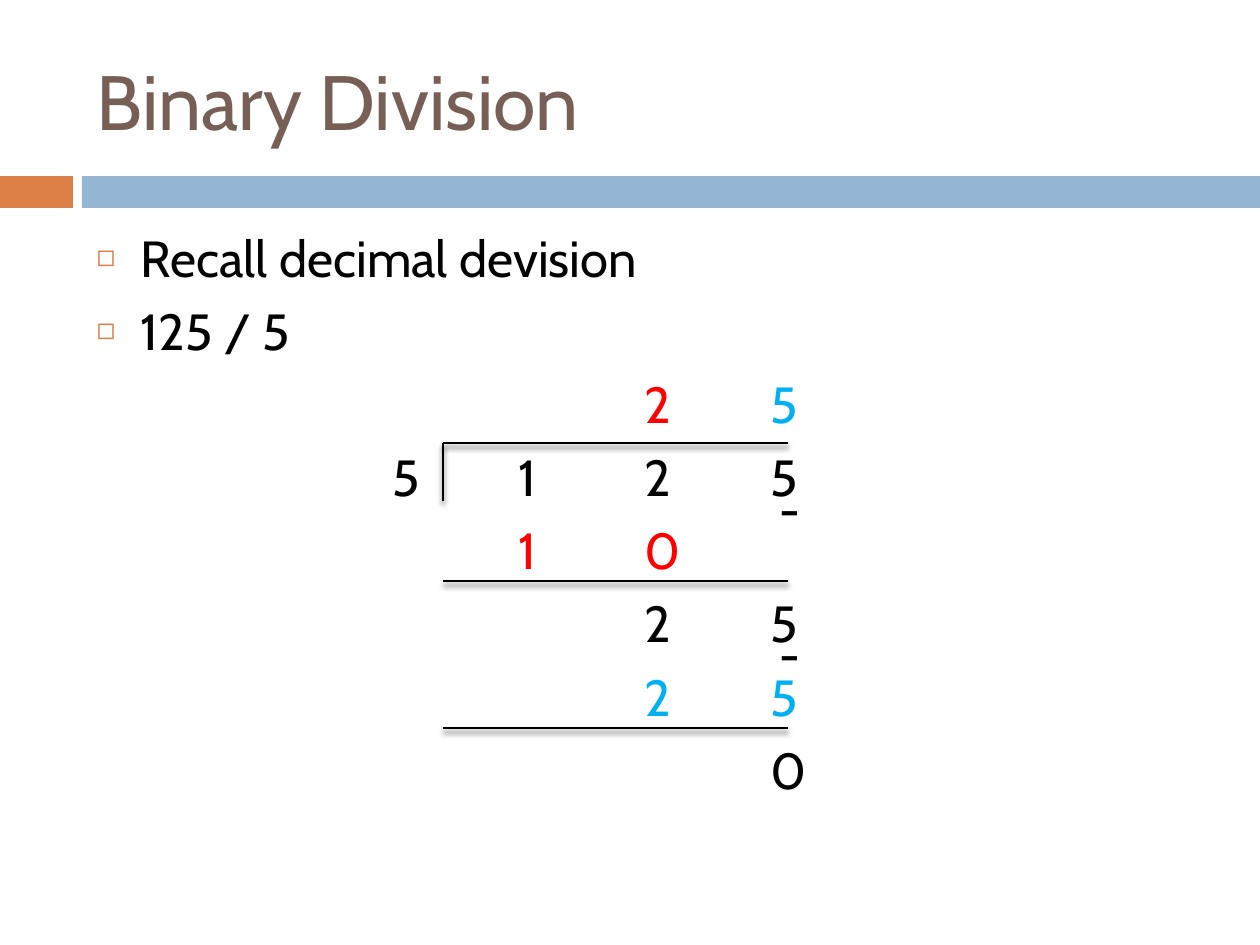
from dataclasses import dataclass

from lxml.etree import SubElement
from pptx import Presentation
from pptx.dml.color import RGBColor
from pptx.enum.shapes import MSO_CONNECTOR as Connector, MSO_SHAPE as Shape
from pptx.enum.text import MSO_ANCHOR as Anchor, MSO_AUTO_SIZE as AutoSize, PP_ALIGN as Align
from pptx.oxml.ns import qn
from pptx.util import Inches, Pt

PX_PER_INCH = 126


@dataclass(frozen=True)
class Theme:
    font: str = "Cabin"
    title: str = "775F55"
    text: str = "000000"
    accent: str = "DD8047"
    band: str = "94B6D2"
    first_step: str = "FF0000"
    second_step: str = "00B0F0"
    title_size: int = 44
    body_size: int = 29
    minus_size: int = 28
    line_width: float = 1.5


THEME = Theme()

BULLETS = ["Recall decimal devision", "125 / 5"]

# Each row: the tab column of its first digit, then (text, colour) spans.
DIVISION = [
    (5, [("2\t", THEME.first_step), ("5", THEME.second_step)]),
    (3, [("5\t1\t2\t5", THEME.text)]),
    (4, [("1\t0", THEME.first_step)]),
    (5, [("2\t5", THEME.text)]),
    (5, [("2\t5", THEME.second_step)]),
    (6, [("0", THEME.text)]),
]

RULE_LEFT, RULE_RIGHT = 443, 788
BRACKET_TOP, BRACKET_BOTTOM = 443, 501
SUBTRACTION_RULES = [581, 728]
MINUS_TOPS = [472, 617]


def px(*lengths):
    return [Inches(length / PX_PER_INCH) for length in lengths]


def set_font(font, size, color):
    font.name = THEME.font
    font.size = Pt(size)
    font.color.rgb = RGBColor.from_string(color)


def place(shape, *bounds):
    shape.left, shape.top, shape.width, shape.height = px(*bounds)


def add_bar(page, color, *bounds):
    bar = page.shapes.add_shape(Shape.RECTANGLE, *px(*bounds))
    bar.shadow.inherit = False
    bar.fill.solid()
    bar.fill.fore_color.rgb = RGBColor.from_string(color)
    bar.line.fill.background()


def add_rule(page, *ends):
    """Draw a straight line with a soft shadow below it."""
    rule = page.shapes.add_connector(Connector.STRAIGHT, *px(*ends))
    rule.line.width = Pt(THEME.line_width)
    rule.line.color.rgb = RGBColor.from_string(THEME.text)
    effects = SubElement(rule._element.spPr, qn("a:effectLst"))
    shadow = SubElement(effects, qn("a:outerShdw"), blurRad=str(Pt(3)),
                        dist=str(Pt(2.4)), dir="5400000", rotWithShape="0")
    color = SubElement(shadow, qn("a:srgbClr"), val=THEME.text)
    SubElement(color, qn("a:alpha"), val="45000")


def add_minus(page, top):
    box = page.shapes.add_textbox(*px(767, top, 49, 72))
    box.text_frame.word_wrap = True
    box.text_frame.auto_size = AutoSize.SHAPE_TO_FIT_TEXT
    para = box.text_frame.paragraphs[0]
    para.text = "-"
    set_font(para.font, THEME.minus_size, THEME.text)


def fill_title(title):
    place(title, 84, 32, 1124, 136)
    frame = title.text_frame
    frame.auto_size = AutoSize.NONE
    frame.vertical_anchor = Anchor.MIDDLE
    para = frame.paragraphs[0]
    para.text = "Binary Division"
    para.alignment = Align.LEFT
    set_font(para.font, THEME.title_size, THEME.title)


def format_body_para(para, bulleted):
    """Set spacing, hanging indent, one-inch tabs and the bullet."""
    para.space_before = Pt(7)
    props = para._p.get_or_add_pPr()
    hang = Inches(0.35)
    props.set("marL", str(hang))
    props.set("indent", str(-hang))
    props.set("defTabSz", str(Inches(1)))
    if bulleted:
        color = SubElement(props, qn("a:buClr"))
        SubElement(color, qn("a:srgbClr"), val=THEME.accent)
        SubElement(props, qn("a:buSzPct"), val="60000")
        SubElement(props, qn("a:buChar"), char="◻")
    else:
        SubElement(props, qn("a:buNone"))
    set_font(para.font, THEME.body_size, THEME.text)


def fill_body(body):
    place(body, 84, 220, 1124, 620)
    frame = body.text_frame
    frame.auto_size = AutoSize.NONE
    rows = [(0, [(text, THEME.text)]) for text in BULLETS] + DIVISION
    for index, (column, spans) in enumerate(rows):
        para = frame.add_paragraph() if index else frame.paragraphs[0]
        format_body_para(para, bulleted=column == 0)
        if column:
            para.add_run().text = "\t" * column
        for text, color in spans:
            span = para.add_run()
            span.text = text
            if color != THEME.text:
                span.font.color.rgb = RGBColor.from_string(color)


def main():
    deck = Presentation()
    deck.slide_width, deck.slide_height = Inches(10), Inches(7.5)
    page = deck.slides.add_slide(deck.slide_layouts[1])
    add_bar(page, THEME.accent, 0, 176, 73, 32)
    add_bar(page, THEME.band, 82, 176, 1178, 32)
    fill_title(page.shapes.title)
    fill_body(page.placeholders[1])
    add_rule(page, RULE_LEFT, BRACKET_TOP, RULE_LEFT, BRACKET_BOTTOM)
    for y in [BRACKET_TOP, *SUBTRACTION_RULES]:
        add_rule(page, RULE_LEFT, y, RULE_RIGHT, y)
    for top in MINUS_TOPS:
        add_minus(page, top)
    deck.save("out.pptx")


if __name__ == "__main__":
    main()
